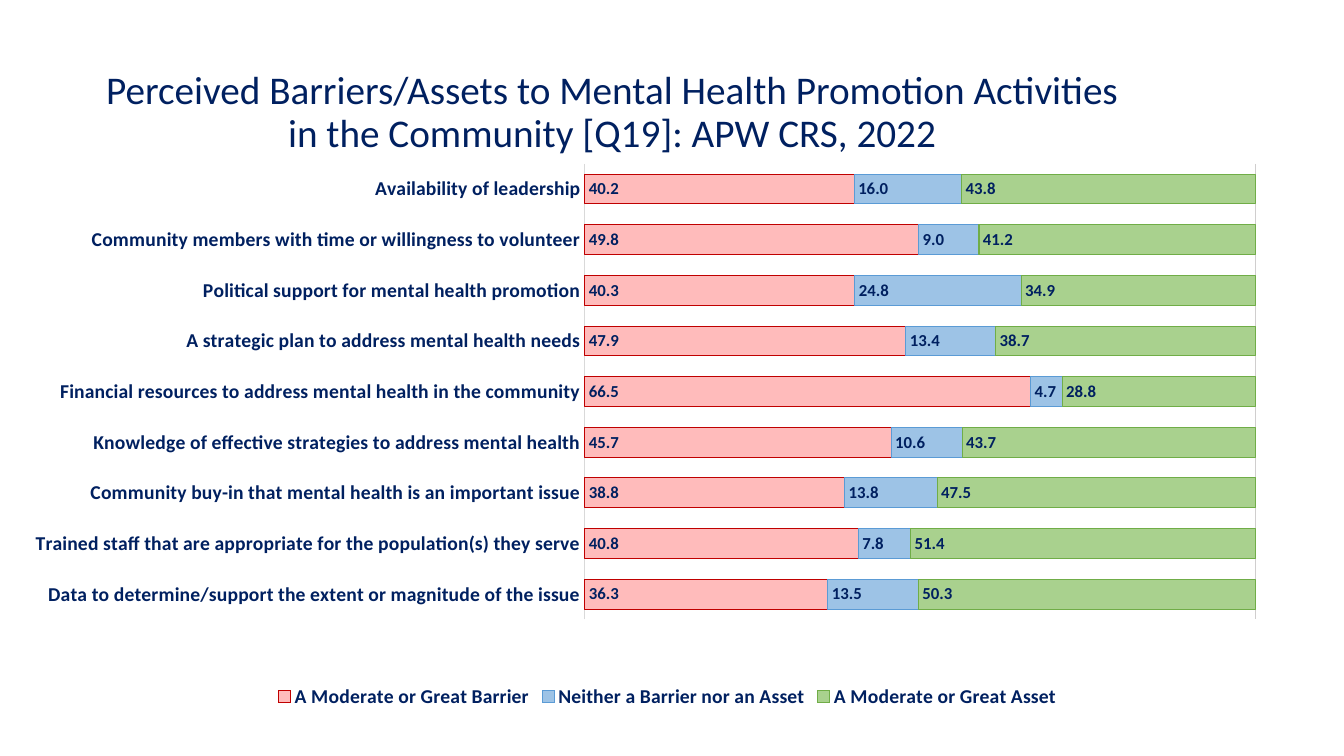
from lxml import etree
from pptx import Presentation, util as u
from pptx.chart.data import CategoryChartData
from pptx.dml.color import RGBColor
from pptx.enum import chart as charts, text
from pptx.oxml import ns

NAVY = RGBColor(0x00, 0x20, 0x60)
AXIS_GREY = RGBColor(0xD9, 0xD9, 0xD9)
GRID_GREY = RGBColor(0xD0, 0xCE, 0xCE)
PINK, RED = RGBColor(0xFF, 0x8F, 0x8F), RGBColor(0xC0, 0x00, 0x00)
LIGHT_BLUE, BLUE = RGBColor(0x9D, 0xC3, 0xE6), RGBColor(0x5B, 0x9B, 0xD5)
LIGHT_GREEN, GREEN = RGBColor(0xA9, 0xD1, 0x8E), RGBColor(0x70, 0xAD, 0x47)

WIDTH, HEIGHT = u.Inches(13.33), u.Inches(7.5)
TITLE_BOX = (0.069, 0.0533, 0.7727, 0.1933)
CHART_BOX = (0.0233, 0.1493, 0.9467, 0.7933)
PLOT_BOX = {"x": 0.435, "y": 0.085, "w": 0.527, "h": 0.76}

TITLE = ("Perceived Barriers/Assets to Mental Health Promotion Activities\v"
         "in the Community [Q19]: APW CRS, 2022")
RATINGS = (
    ("A Moderate or Great Barrier", PINK, RED, 60),
    ("Neither a Barrier nor an Asset", LIGHT_BLUE, BLUE, 100),
    ("A Moderate or Great Asset", LIGHT_GREEN, GREEN, 100),
)
RESPONSES = (
    ("Data to determine/support the extent or magnitude of the issue", 36.3, 13.5, 50.3),
    ("Trained staff that are appropriate for the population(s) they serve", 40.8, 7.8, 51.4),
    ("Community buy-in that mental health is an important issue", 38.8, 13.8, 47.5),
    ("Knowledge of effective strategies to address mental health", 45.7, 10.6, 43.7),
    ("Financial resources to address mental health in the community", 66.5, 4.7, 28.8),
    ("A strategic plan to address mental health needs", 47.9, 13.4, 38.7),
    ("Political support for mental health promotion", 40.3, 24.8, 34.9),
    ("Community members with time or willingness to volunteer", 49.8, 9.0, 41.2),
    ("Availability of leadership", 40.2, 16.0, 43.8),
)


def apply(target, **values):
    """Set each given attribute on the target."""
    for name, value in values.items():
        setattr(target, name, value)


def style_font(font, size, bold=False):
    """Give a font the slide's typeface and colour."""
    apply(font, name="Calibri", size=u.Pt(size), bold=bold)
    font.color.rgb = NAVY


def style_line(line, color):
    """Draw a thin line in the given colour."""
    line.color.rgb = color
    line.width = u.Pt(0.75)


def scale(box):
    """Turn shares of the slide's size into lengths."""
    left, top, width, height = box
    return (round(left * WIDTH), round(top * HEIGHT),
            round(width * WIDTH), round(height * HEIGHT))


def add_title(slide, box):
    """Place the heading in the title placeholder."""
    title = slide.shapes.title
    left, top, width, height = scale(box)
    apply(title, left=left, top=top, width=width, height=height)
    apply(title.text_frame, text=TITLE, word_wrap=True,
          vertical_anchor=text.MSO_ANCHOR.MIDDLE, auto_size=text.MSO_AUTO_SIZE.NONE)
    paragraph = title.text_frame.paragraphs[0]
    apply(paragraph, alignment=text.PP_ALIGN.CENTER, line_spacing=0.9)
    for run in paragraph.runs:
        style_font(run.font, 28)


def set_plot_layout(chart, box):
    """Fix the inner plot area as shares of the chart."""
    plot_area = chart.plots[0]._element.getparent()
    for layout in plot_area.findall(ns.qn("c:layout")):
        plot_area.remove(layout)
    layout = etree.Element(ns.qn("c:layout"))
    manual = etree.SubElement(layout, ns.qn("c:manualLayout"))
    settings = {"layoutTarget": "inner", "xMode": "edge", "yMode": "edge", **box}
    for name, value in settings.items():
        etree.SubElement(manual, ns.qn(f"c:{name}"), val=str(value))
    plot_area.insert(0, layout)


def style_series(series, fill, line, opacity):
    """Colour one rating and label its bars."""
    series.format.fill.solid()
    series.format.fill.fore_color.rgb = fill
    if opacity < 100:
        color = series._element.find(".//" + ns.qn("a:srgbClr"))
        etree.SubElement(color, ns.qn("a:alpha"), val=str(opacity * 1000))
    style_line(series.format.line, line)
    labels = series.data_labels
    apply(labels, show_value=True, number_format="0.0", number_format_is_linked=False,
          position=charts.XL_LABEL_POSITION.INSIDE_BASE)
    style_font(labels.font, 12, bold=True)


def style_axes(chart):
    """Show the category names and one gridline at each end."""
    categories, values = chart.category_axis, chart.value_axis
    apply(categories, major_tick_mark=charts.XL_TICK_MARK.NONE,
          minor_tick_mark=charts.XL_TICK_MARK.NONE)
    style_font(categories.tick_labels.font, 14, bold=True)
    style_line(categories.format.line, AXIS_GREY)
    apply(values, minimum_scale=0, major_unit=1, visible=False, has_major_gridlines=True)
    style_line(values.major_gridlines.format.line, GRID_GREY)


def add_barriers_chart(slide, box):
    """Place the stacked bars with their legend."""
    data = CategoryChartData(number_format="0.0")
    names, *columns = zip(*RESPONSES)
    data.categories = names
    for rating, column in zip(RATINGS, columns):
        data.add_series(rating[0], column)
    chart = slide.shapes.add_chart(
        charts.XL_CHART_TYPE.BAR_STACKED_100, *scale(box), data).chart
    apply(chart, has_title=False, has_legend=True)
    apply(chart.font, name="Calibri", size=u.Pt(10))
    apply(chart.legend, position=charts.XL_LEGEND_POSITION.BOTTOM, include_in_layout=False)
    style_font(chart.legend.font, 14, bold=True)
    plot = chart.plots[0]
    apply(plot, gap_width=70, overlap=100, vary_by_categories=False)
    for series, rating in zip(plot.series, RATINGS):
        style_series(series, *rating[1:])
    style_axes(chart)
    set_plot_layout(chart, PLOT_BOX)


def main():
    """Build and save the slide."""
    presentation = Presentation()
    apply(presentation, slide_width=WIDTH, slide_height=HEIGHT)
    slide = presentation.slides.add_slide(presentation.slide_layouts[5])
    add_title(slide, TITLE_BOX)
    add_barriers_chart(slide, CHART_BOX)
    presentation.save("out.pptx")


if __name__ == "__main__":
    main()
